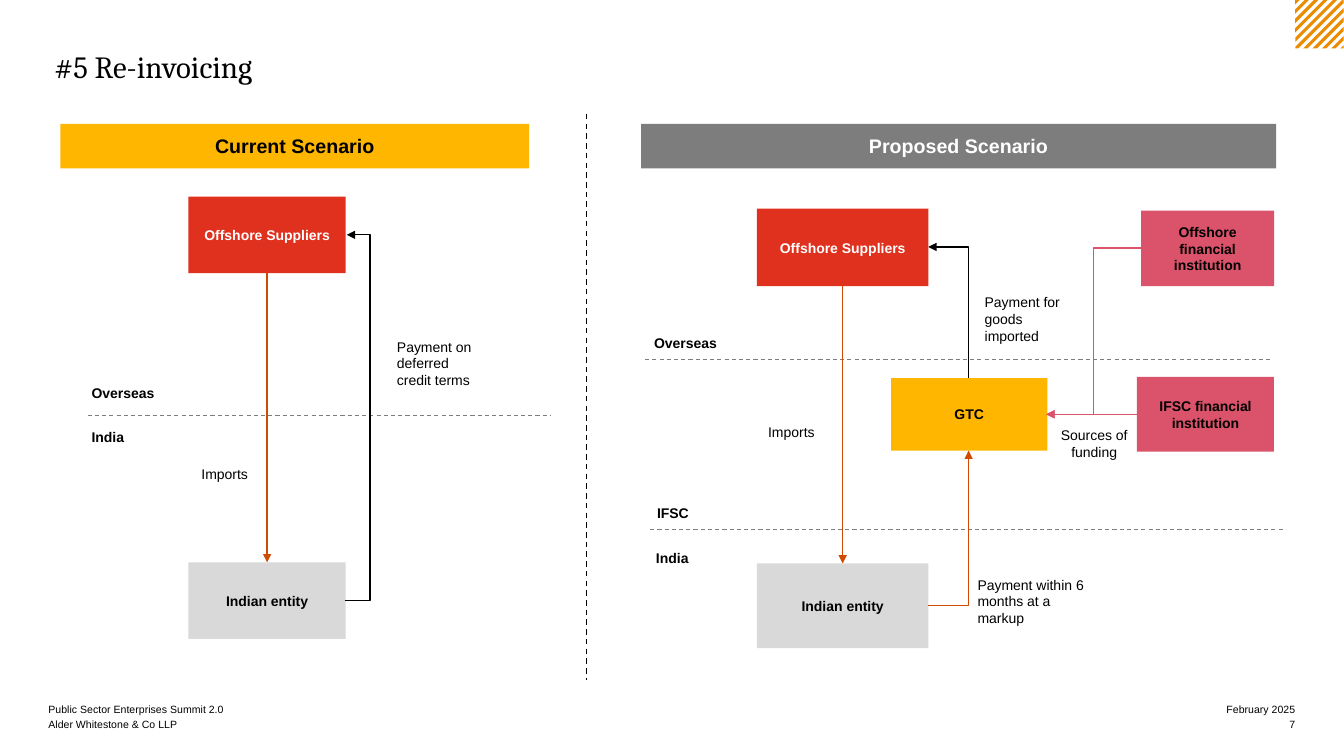
from dataclasses import dataclass
from typing import Any

from lxml.etree import SubElement
from pptx import Presentation
from pptx.dml.color import RGBColor
from pptx.enum.dml import MSO_LINE
from pptx.enum.shapes import MSO_CONNECTOR, MSO_SHAPE
from pptx.enum.text import MSO_ANCHOR, PP_ALIGN
from pptx.oxml.ns import qn
from pptx.util import Emu, Pt

BLACK, WHITE, GREY, SILVER = "000000", "FFFFFF", "7D7D7D", "D9D9D9"
YELLOW, RED, ROSE, RUST, ORANGE = "FFB600", "E0301E", "DB536A", "D04A02", "EB8C00"


@dataclass
class Region:
    slide: Any
    left: int
    top: int
    width: int
    height: int

    def point(self, x, y):
        return px(self.left + x), px(self.top + y)


def px(length):
    return Emu(round(length * 9144))


def color(value):
    return RGBColor.from_string(value)


def write(shape, text, size=10, ink=BLACK, bold=False, font="Arial",
          align=PP_ALIGN.LEFT, anchor=MSO_ANCHOR.MIDDLE, inset=10):
    frame = shape.text_frame
    frame.word_wrap = True
    frame.vertical_anchor = anchor
    frame.margin_left = frame.margin_right = px(inset)
    frame.margin_top = frame.margin_bottom = px(inset)
    paragraph = frame.paragraphs[0]
    paragraph.alignment = align
    run = paragraph.add_run()
    run.text = text
    run.font.name = font
    run.font.size = Pt(size)
    run.font.bold = bold
    run.font.color.rgb = color(ink)


def add_label(region, text, left, top, width, height, **text_format):
    shape = region.slide.shapes.add_textbox(
        *region.point(left, top), px(width), px(height))
    write(shape, text, **text_format)


def add_box(region, text, fill, left, top, width, height, **text_format):
    shape = region.slide.shapes.add_shape(
        MSO_SHAPE.RECTANGLE, *region.point(left, top), px(width), px(height))
    shape.shadow.inherit = False
    shape.fill.solid()
    shape.fill.fore_color.rgb = color(fill)
    shape.line.fill.background()
    write(shape, text, bold=True, align=PP_ALIGN.CENTER, **text_format)


def add_line(region, start, end, ink, kind=MSO_CONNECTOR.STRAIGHT,
             weight=1, dashed=False, arrow=None):
    connector = region.slide.shapes.add_connector(
        kind, *region.point(*start), *region.point(*end))
    connector.line.color.rgb = color(ink)
    connector.line.width = Pt(weight)
    if dashed:
        connector.line.dash_style = MSO_LINE.DASH
    if arrow:
        SubElement(connector.line._get_or_add_ln(), qn(f"a:{arrow}End"), type="triangle")
    SubElement(connector._element.spPr, qn("a:effectLst"))
    return connector


def add_elbow(region, start, end, ink, arrow="tail", via=None, corner=False):
    connector = add_line(region, start, end, ink, MSO_CONNECTOR.ELBOW, arrow=arrow)
    geometry = connector._element.spPr.find(qn("a:prstGeom"))
    if corner:
        geometry.set("prst", "bentConnector2")
    if via is not None:
        share = round((via - start[0]) / (end[0] - start[0]) * 100000)
        guides = geometry.find(qn("a:avLst"))
        SubElement(guides, qn("a:gd"), name="adj1", fmla=f"val {share}")


def add_divider(region, left, right, y):
    add_line(region, (left, y), (right, y), GREY, weight=0.75, dashed=True)


def draw_corner_stripes(region):
    side, pitch, thickness = region.width, 9.3, 4.4
    for index in range(11):
        near = index * pitch
        far = min(near + thickness, 2 * side)
        edge = [(min(total, side), max(0, total - side)) for total in (near, far)]
        if near < side < far:
            edge.insert(1, (side, 0))
        outline = edge + [(y, x) for x, y in reversed(edge)]
        points = [region.point(*corner) for corner in outline]
        builder = region.slide.shapes.build_freeform(*points[0], scale=1.0)
        builder.add_line_segments(points[1:], close=True)
        stripe = builder.convert_to_shape()
        stripe.shadow.inherit = False
        stripe.fill.solid()
        stripe.fill.fore_color.rgb = color(ORANGE)
        stripe.line.fill.background()


def draw_title(region):
    add_label(region, "#5 Re-invoicing", 0, 0, region.width, region.height,
              size=22, font="Cambria", anchor=MSO_ANCHOR.TOP, inset=0)


def draw_footer(region):
    rows = [("Public Sector Enterprises Summit 2.0", "February 2025"),
            ("Alder Whitestone & Co LLP", "7")]
    line_height = region.height // len(rows)
    for index, (left_text, right_text) in enumerate(rows):
        top = index * line_height
        footer = dict(size=7.5, anchor=MSO_ANCHOR.BOTTOM, inset=0)
        add_label(region, left_text, 0, top, 599, line_height, **footer)
        add_label(region, right_text, region.width - 193, top, 193, line_height,
                  align=PP_ALIGN.RIGHT, **footer)


def draw_current_scenario(region):
    add_box(region, "Current Scenario", YELLOW, 0, 0, region.width, 44, size=14)
    add_box(region, "Offshore Suppliers", RED, 127, 72, 156, 76, ink=WHITE)
    add_box(region, "Indian entity", SILVER, 127, 435, 156, 76)
    add_divider(region, 27, 487, 289)
    add_label(region, "Overseas", 21, 248, 112, 38, bold=True)
    add_label(region, "India", 21, 292, 87, 37, bold=True)
    add_label(region, "Imports", 130, 329, 97, 37)
    add_label(region, "Payment on deferred credit terms", 324, 202, 97, 71)
    add_line(region, (205, 148), (205, 435), RUST, arrow="tail")
    add_elbow(region, (282, 473), (284, 110), BLACK, via=307)


def draw_proposed_scenario(region):
    add_box(region, "Proposed Scenario", GREY, 0, 0, region.width, 44, size=14, ink=WHITE)
    add_box(region, "Offshore Suppliers", RED, 115, 84, 170, 77, ink=WHITE)
    add_box(region, "Indian entity", SILVER, 115, 436, 170, 84)
    add_box(region, "GTC", YELLOW, 248, 252, 155, 72)
    add_box(region, "Offshore financial institution", ROSE, 496, 86, 132, 75)
    add_box(region, "IFSC financial institution", ROSE, 492, 251, 136, 74)
    add_divider(region, 4, 626, 234)
    add_divider(region, 9, 639, 402)
    add_label(region, "Overseas", 3, 199, 86, 37, bold=True)
    add_label(region, "IFSC", 6, 367, 106, 37, bold=True)
    add_label(region, "India", 5, 412, 87, 37, bold=True)
    add_label(region, "Imports", 79, 287, 103, 37, align=PP_ALIGN.RIGHT)
    add_label(region, "Sources of funding", 398, 290, 103, 54, align=PP_ALIGN.CENTER)
    add_label(region, "Payment for goods imported", 331, 158, 108, 71)
    add_label(region, "Payment within 6 months at a markup", 324, 438, 130, 71)
    add_line(region, (200, 161), (200, 436), RUST, arrow="tail")
    add_line(region, (492, 288), (402, 288), ROSE, arrow="tail")
    add_elbow(region, (496, 123), (402, 288), ROSE)
    add_elbow(region, (285, 122), (325, 252), BLACK, arrow="head", corner=True)
    add_elbow(region, (285, 478), (325, 324), RUST, corner=True)


def main():
    presentation = Presentation()
    presentation.slide_width = Emu(12192000)
    presentation.slide_height = px(750)
    slide = presentation.slides.add_slide(presentation.slide_layouts[6])
    draw_corner_stripes(Region(slide, 1285, 0, 48, 48))
    draw_title(Region(slide, 54, 47, 1236, 128))
    draw_current_scenario(Region(slide, 60, 123, 465, 511))
    add_line(Region(slide, 582, 113, 0, 562), (0, 0), (0, 562), BLACK, dashed=True)
    draw_proposed_scenario(Region(slide, 636, 123, 630, 520))
    draw_footer(Region(slide, 48, 695, 1237, 30))
    presentation.save("out.pptx")


if __name__ == "__main__":
    main()
